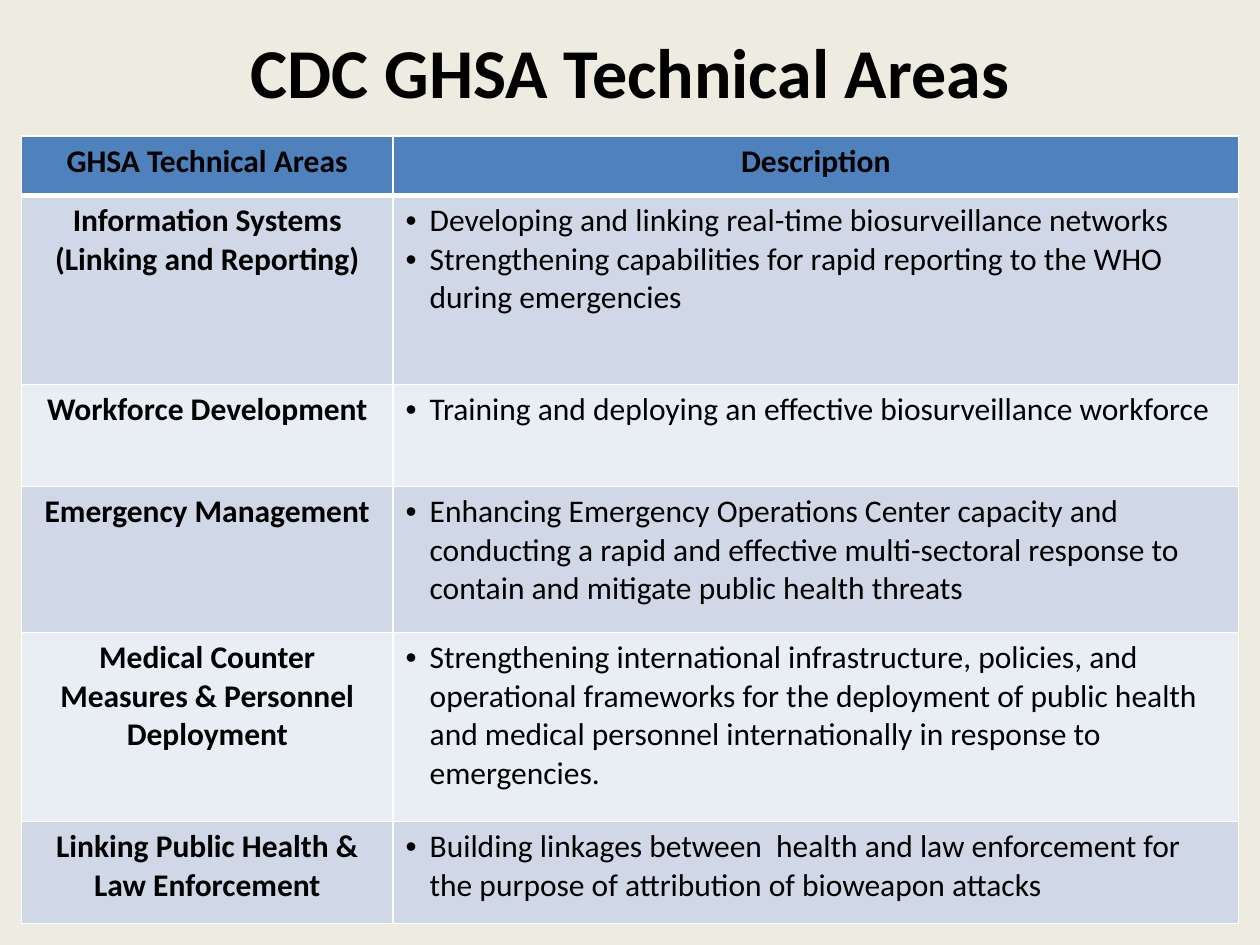
from lxml.etree import SubElement
from pptx import Presentation
from pptx.dml.color import RGBColor
from pptx.enum.text import MSO_ANCHOR, PP_ALIGN
from pptx.oxml.ns import qn
from pptx.util import Inches, Pt

TITLE = "CDC GHSA Technical Areas"
HEADINGS = ("GHSA Technical Areas", "Description")
AREAS = [
    ("Information Systems (Linking and Reporting)", [
        "Developing and linking real-time biosurveillance networks",
        "Strengthening capabilities for rapid reporting to the WHO during emergencies"]),
    ("Workforce Development", [
        "Training and deploying an effective biosurveillance workforce"]),
    ("Emergency Management", [
        "Enhancing Emergency Operations Center capacity and conducting a rapid and effective "
        "multi-sectoral response to contain and mitigate public health threats"]),
    ("Medical Counter Measures & Personnel Deployment", [
        "Strengthening international infrastructure, policies, and operational frameworks for the "
        "deployment of public health and medical personnel internationally in response to emergencies."]),
    ("Linking Public Health & Law Enforcement", [
        "Building linkages between  health and law enforcement for the purpose of attribution "
        "of bioweapon attacks"]),
]
COLUMN_WIDTHS = (2.95, 6.71)
ROW_HEIGHTS = (0.47, 1.5, 0.81, 1.16, 1.5, 0.81)
HEADER_FILL, BANDS = "4F81BD", ("D0D8E8", "E9EDF4")
BACKGROUND, INK, RULE = "EEECE1", "000000", "FFFFFF"
INDENT = Inches(0.19)


def color(value):
    """Turn a hex string into a colour."""
    return RGBColor.from_string(value)


def write(frame, lines, size=18, bold=False, align=PP_ALIGN.LEFT, bullet=False):
    """Fill a text frame with one paragraph per line."""
    for index, line in enumerate(lines):
        para = frame.add_paragraph() if index else frame.paragraphs[0]
        para.alignment = align
        span = para.add_run()
        span.text = line
        span.font.name, span.font.size, span.font.bold = "Calibri", Pt(size), bold
        span.font.color.rgb = color(INK)
        if bullet:
            settings = para._p.get_or_add_pPr()
            settings.set("marL", str(INDENT))
            settings.set("indent", str(-INDENT))
            SubElement(settings, qn("a:buFont"), typeface="Arial")
            SubElement(settings, qn("a:buChar"), char="•")


def style_cell(cell, fill, top=1, bottom=1):
    """Give a cell its rules, in points, and its fill."""
    settings = cell._tc.get_or_add_tcPr()
    for side, width in (("L", 1), ("R", 1), ("T", top), ("B", bottom)):
        line = SubElement(settings, qn(f"a:ln{side}"), w=str(Pt(width)))
        SubElement(SubElement(line, qn("a:solidFill")), qn("a:srgbClr"), val=RULE)
    cell.fill.solid()
    cell.fill.fore_color.rgb = color(fill)


def add_title(page):
    """Place and write the slide title."""
    title = page.shapes.title
    title.left, title.top, title.width, title.height = map(Inches, (0.5, 0.17, 9, 0.78))
    title.text_frame.vertical_anchor = MSO_ANCHOR.MIDDLE
    write(title.text_frame, [TITLE], size=40, bold=True, align=PP_ALIGN.CENTER)


def add_areas(page):
    """Build the table of technical areas."""
    table = page.shapes.add_table(
        len(ROW_HEIGHTS), len(COLUMN_WIDTHS), Inches(0.17), Inches(1.08),
        Inches(sum(COLUMN_WIDTHS)), Inches(sum(ROW_HEIGHTS))).table
    for column, width in zip(table.columns, COLUMN_WIDTHS):
        column.width = Inches(width)
    for row, height in zip(table.rows, ROW_HEIGHTS):
        row.height = Inches(height)
    for index, heading in enumerate(HEADINGS):
        cell = table.cell(0, index)
        style_cell(cell, HEADER_FILL, bottom=3)
        write(cell.text_frame, [heading], bold=True, align=PP_ALIGN.CENTER)
    for index, (area, points) in enumerate(AREAS):
        name, description = table.rows[index + 1].cells
        for cell in (name, description):
            style_cell(cell, BANDS[index % 2], top=1 if index else 3)
        write(name.text_frame, [area], bold=True, align=PP_ALIGN.CENTER)
        write(description.text_frame, points, bullet=True)


def main():
    """Build and save the deck."""
    deck = Presentation()
    deck.slide_width, deck.slide_height = Inches(10), Inches(7.5)
    page = deck.slides.add_slide(deck.slide_layouts.get_by_name("Title Only"))
    page.background.fill.solid()
    page.background.fill.fore_color.rgb = color(BACKGROUND)
    add_title(page)
    add_areas(page)
    deck.save("out.pptx")


if __name__ == "__main__":
    main()
